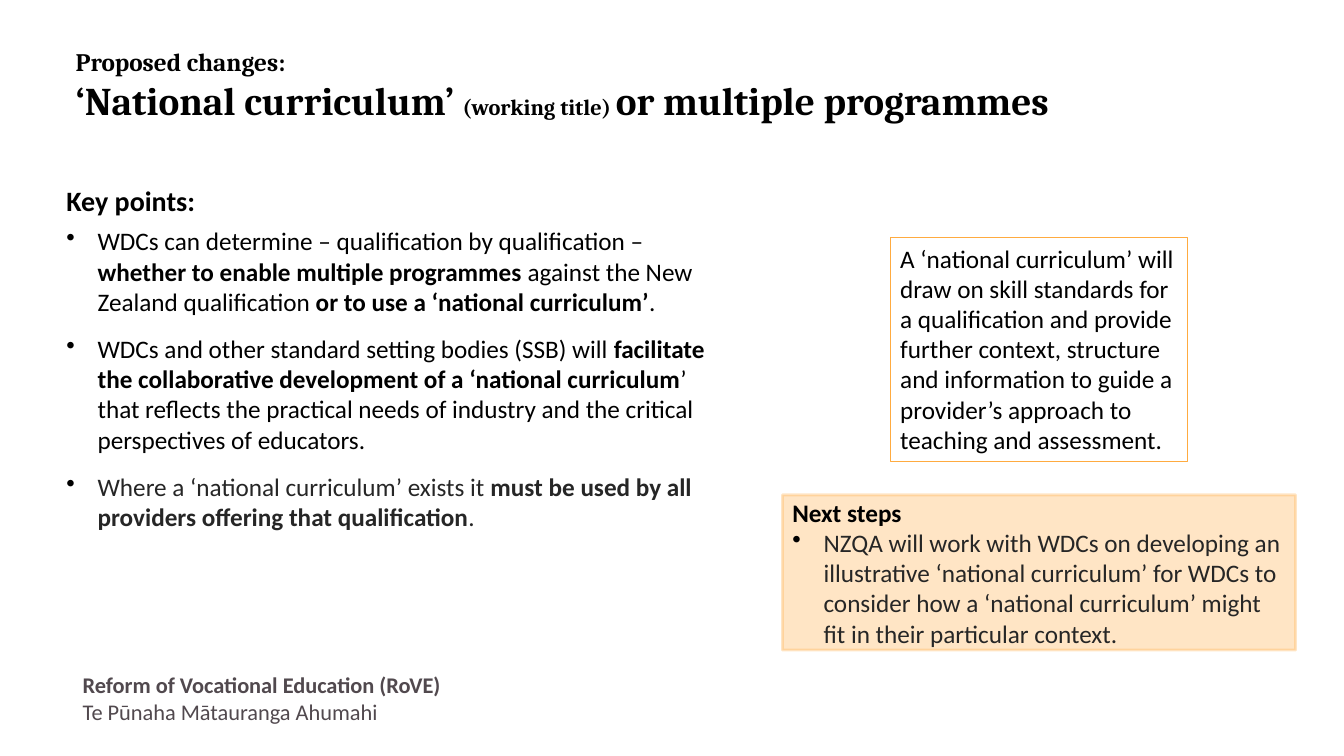
from lxml import etree
from pptx import Presentation
from pptx.dml.color import RGBColor
from pptx.enum.shapes import MSO_SHAPE as Shape
from pptx.enum.text import MSO_ANCHOR as Anchor, MSO_AUTO_SIZE as Fit, PP_ALIGN as Align
from pptx.oxml.ns import qn
from pptx.util import Inches, Pt

COLORS = {"ink": "000000", "soft": "262626", "foot": "51494E", "accent": "FFAB40"}
INDENT = Inches(0.31)

POINTS = [
    ("WDCs can determine – qualification by qualification – *whether to enable multiple "
     "programmes *against the New Zealand qualification *or to use a ‘national curriculum’*.",
     "ink"),
    ("WDCs and other standard setting bodies (SSB) will *facilitate the collaborative "
     "development of a ‘national curriculum*’ that reflects the practical needs of industry "
     "and the critical perspectives of educators.", "ink"),
    ("Where a ‘national curriculum’ exists it *must be used by all providers offering that "
     "qualification*.", "soft"),
]
STEP = ("NZQA will work with WDCs on developing an illustrative ‘national curriculum’ for WDCs "
        "to consider how a ‘national curriculum’ might fit in their particular context.")
MEANING = ("A ‘national curriculum’ will draw on skill standards for a qualification and provide "
           "further context, structure and information to guide a provider’s approach to "
           "teaching and assessment.")


def rgb(name):
    return RGBColor.from_string(COLORS[name])


def write(par, text, size=18, color="ink", bold=False, font="Calibri"):
    """Add text to a paragraph; each asterisk switches bold on or off."""
    for i, part in enumerate(text.split("*")):
        run = par.add_run()
        run.text = part
        run.font.name, run.font.size = font, Pt(size)
        run.font.bold = bold != (i % 2 == 1)
        run.font.color.rgb = rgb(color)


def bullet(par):
    props = par._p.get_or_add_pPr()
    props.set("marL", str(INDENT))
    props.set("indent", str(-INDENT))
    tint = etree.SubElement(props, qn("a:buClr"))
    etree.SubElement(tint, qn("a:srgbClr"), val=COLORS["ink"])
    etree.SubElement(props, qn("a:buChar"), char="•")


def frame(shape, inset=None, anchor=Anchor.TOP):
    """Prepare a shape's text frame and return it."""
    text = shape.text_frame
    text.word_wrap, text.auto_size, text.vertical_anchor = True, Fit.NONE, anchor
    if inset is not None:
        text.margin_left = text.margin_right = Inches(inset)
        text.margin_top = text.margin_bottom = Inches(inset)
    return text


def fade(fill, percent):
    for color in fill._xPr.iter(qn("a:srgbClr")):
        etree.SubElement(color, qn("a:alpha"), val=str(percent * 1000))


def panel(slide, box, width):
    """Add an unfilled rectangle with an accent outline."""
    shape = slide.shapes.add_shape(Shape.RECTANGLE, *map(Inches, box))
    shape.shadow.inherit = False
    shape.fill.background()
    shape.line.color.rgb = rgb("accent")
    shape.line.width = Pt(width)
    return shape


def heading(slide, box):
    title = slide.shapes.title
    title.left, title.top, title.width, title.height = map(Inches, box)
    par = frame(title, 0.1, Anchor.MIDDLE).paragraphs[0]
    par.alignment, par.line_spacing = Align.LEFT, 1.0
    style = dict(bold=True, font="Cambria")
    write(par, "Proposed changes: ", **style)
    par.add_line_break()
    write(par, "‘National curriculum’ ", size=28, **style)
    write(par, "(working title) ", size=16, **style)
    write(par, "or multiple programmes", size=28, **style)


def key_points(slide, box):
    text = frame(slide.shapes.add_textbox(*map(Inches, box)), 0.1)
    lead = text.paragraphs[0]
    lead.line_spacing = 1.19
    write(lead, "Key points:", size=20, bold=True)
    for point, color in POINTS:
        par = text.add_paragraph()
        bullet(par)
        par.space_before = par.space_after = Pt(6)
        write(par, point, color=color)


def next_steps(slide, box):
    shape = panel(slide, box, 2)
    shape.fill.solid()
    shape.fill.fore_color.rgb = rgb("accent")
    fade(shape.fill, 30)
    text = frame(shape, anchor=Anchor.MIDDLE)
    lead, step = text.paragraphs[0], text.add_paragraph()
    lead.alignment = step.alignment = Align.LEFT
    write(lead, "Next steps", bold=True)
    bullet(step)
    write(step, STEP, color="soft")


def meaning(slide, box):
    par = frame(panel(slide, box, 0.75)).paragraphs[0]
    par.alignment = Align.LEFT
    write(par, MEANING)


def footer(slide, box):
    text = frame(slide.shapes.add_textbox(*map(Inches, box)), 0)
    write(text.paragraphs[0], "Reform of Vocational Education (RoVE)",
          size=16, color="foot", bold=True)
    write(text.add_paragraph(), "Te Pūnaha Mātauranga Ahumahi", size=16, color="foot")


def main():
    deck = Presentation()
    deck.slide_width, deck.slide_height = Inches(13.33), Inches(7.5)
    slide = deck.slides.add_slide(deck.slide_layouts[5])
    footer(slide, (0.82, 6.66, 6.97, 0.62))
    heading(slide, (0.65, 0.57, 11.52, 0.55))
    key_points(slide, (0.56, 1.66, 6.55, 2.3))
    next_steps(slide, (7.76, 4.91, 5.09, 1.54))
    meaning(slide, (8.83, 2.36, 2.95, 2.22))
    deck.save("out.pptx")


if __name__ == "__main__":
    main()
